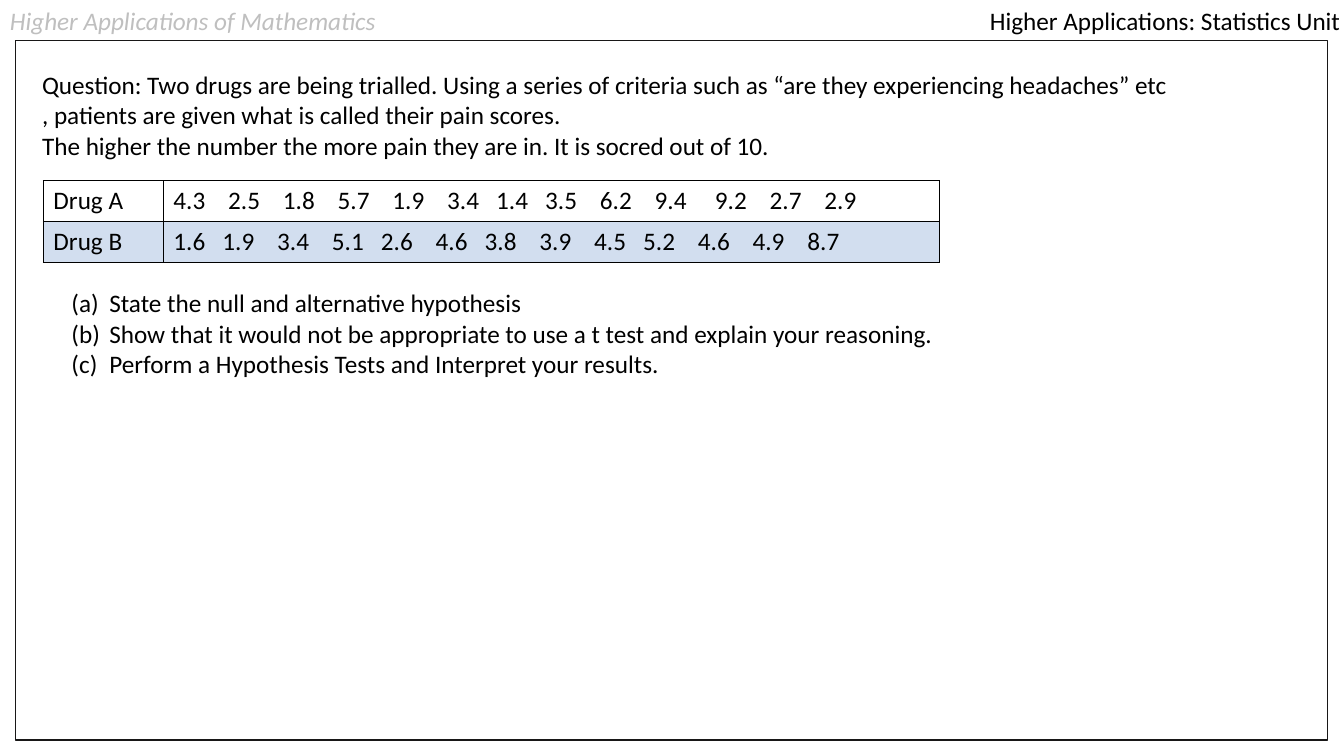
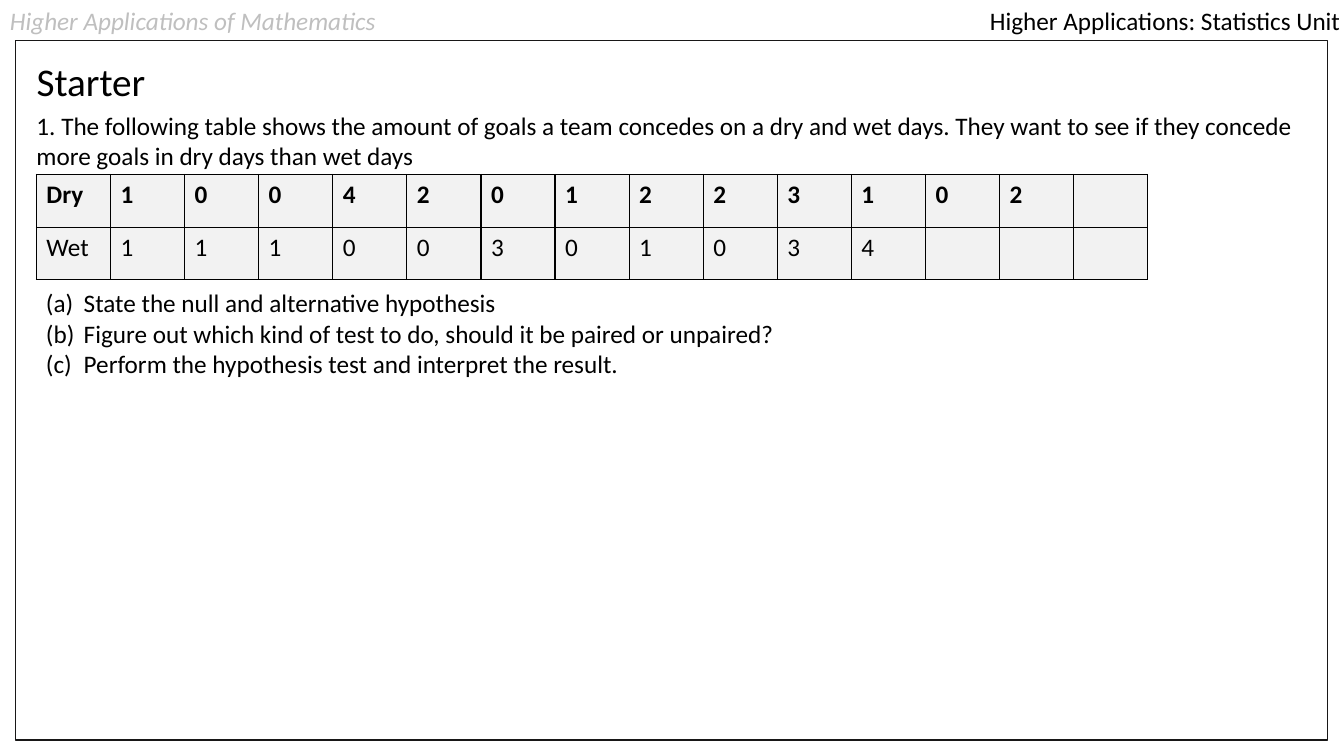
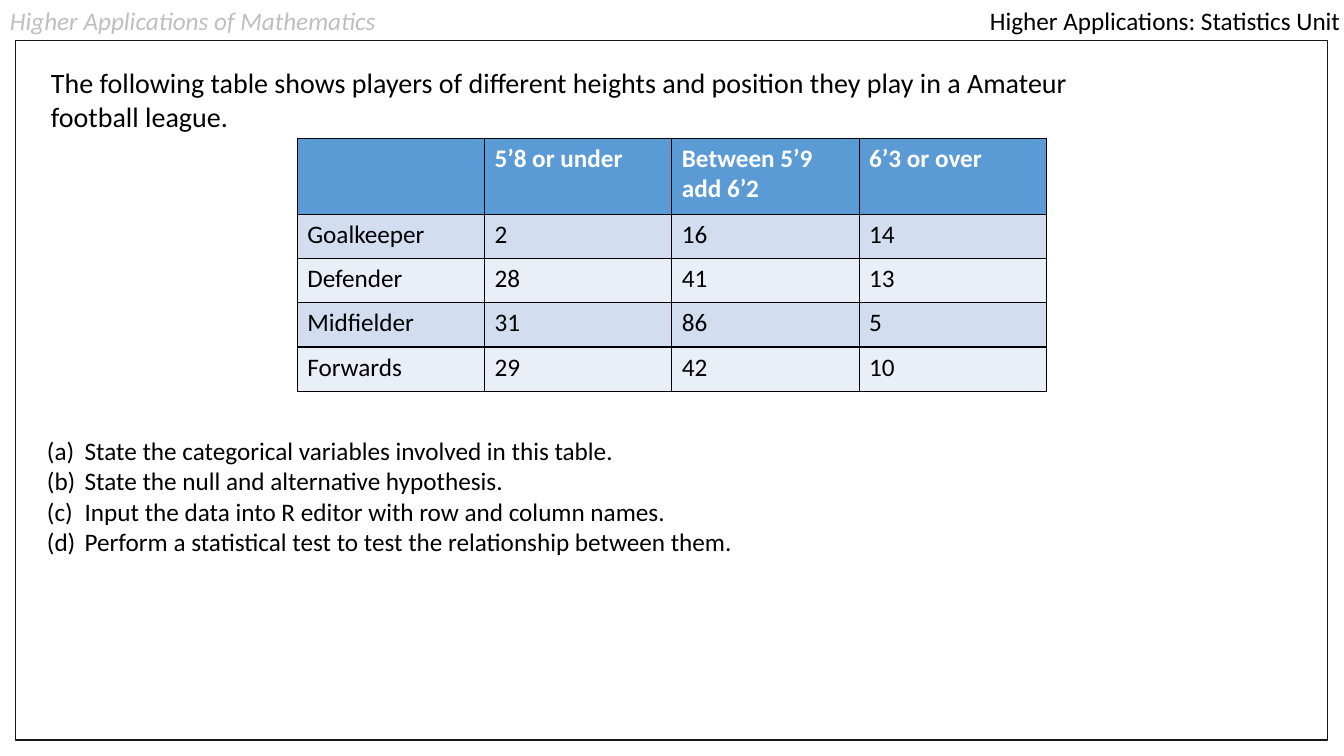
from itertools import accumulate

from pptx import Presentation
from pptx.dml.color import RGBColor
from pptx.enum import shapes, text
from pptx.oxml import parse_xml
from pptx.oxml.ns import nsdecls
from pptx.util import Pt

FONT = "Calibri"
BLACK = RGBColor(0x00, 0x00, 0x00)
WHITE = RGBColor(0xFF, 0xFF, 0xFF)
FRAME = RGBColor(0x18, 0x17, 0x17)
COURSE_GREY = RGBColor(0xBF, 0xBF, 0xBF)
PALE_GREY = RGBColor(0xF2, 0xF2, 0xF2)
HEAD_BLUE = RGBColor(0x5B, 0x9B, 0xD5)
BAND_BLUE = RGBColor(0xD2, 0xDE, 0xEF)
PALE_BLUE = RGBColor(0xEA, 0xEF, 0xF7)

BODY = {"name": FONT, "size": Pt(18), "bold": False, "italic": False}
LIST_INDENT = 27
NARROW, STEP, WIDE = 35, 39.1, 43.1

COURSE = "Higher Applications of Mathematics"
UNIT = "Higher Applications: Statistics Unit"

SCORES_A = ["4.3", "2.5", "1.8", "5.7", "1.9", "3.4", "1.4", "3.5", "6.2", "9.4", "9.2", "2.7", "2.9"]
SCORES_B = ["1.6", "1.9", "3.4", "5.1", "2.6", "4.6", "3.8", "3.9", "4.5", "5.2", "4.6", "4.9", "8.7"]
STEPS_A = [STEP] * 5 + [NARROW] * 2 + [STEP] * 2 + [WIDE] + [STEP] * 2
STEPS_B = [NARROW, STEP, STEP, NARROW, STEP, NARROW, STEP, STEP, NARROW, STEP, STEP, STEP]

SLIDES = [
    {
        "texts": [
            {"at": (23, 46, 906, 72.7), "lines": [
                "Question: Two drugs are being trialled. Using a series of criteria such as "
                "“are they experiencing headaches” etc",
                ", patients are given what is called their pain scores.",
                "The higher the number the more pain they are in. It is socred out of 10.",
            ]},
        ],
        "table": {
            "at": (31, 129), "columns": [85.7, 554.4], "heights": [29.2] * 2,
            "fills": [None, BAND_BLUE], "bold_head": False, "head_color": BLACK,
            "rows": [["Drug A", "\t".join(SCORES_A)], ["Drug B", "\t".join(SCORES_B)]],
            "tabs": [STEPS_A, STEPS_B],
        },
        "tasks": {"at": (44, 202, 637, 72.7), "lines": [
            "State the null and alternative hypothesis",
            "Show that it would not be appropriate to use a t test and explain your reasoning.",
            "Perform a Hypothesis Tests and Interpret your results.",
        ]},
    },
    {
        "texts": [
            {"at": (19, 37.5, 93, 41.2), "lines": ["Starter"], "size": 28, "wrap": False},
            {"at": (19, 75, 931, 50.9), "lines": [
                "1. The following table shows the amount of goals a team concedes on a dry and wet days. "
                "They want to see if they concede more goals in dry days than wet days",
            ]},
        ],
        "table": {
            "at": (26, 124.7), "columns": [52.94] * 15, "heights": [37.6] * 2,
            "fills": [PALE_GREY] * 2, "bold_head": True, "head_color": BLACK,
            "rows": [
                ["Dry", 1, 0, 0, 4, 2, 0, 1, 2, 2, 3, 1, 0, 2, ""],
                ["Wet", 1, 1, 1, 0, 0, 3, 0, 1, 0, 3, 4, "", "", ""],
            ],
        },
        "tasks": {"at": (25.7, 202, 541, 72.7), "lines": [
            "State the null and alternative hypothesis",
            "Figure out which kind of test to do, should it be paired or unpaired?",
            "Perform the hypothesis test and interpret the result.",
        ]},
    },
    {
        "texts": [
            {"at": (29.3, 43.3, 788, 55.7), "size": 20, "lines": [
                "The following table shows players of different heights and position "
                "they play in a Amateur football league.",
            ]},
        ],
        "table": {
            "at": (212.3, 98.7), "columns": [133.8] * 4, "heights": [54.4] + [31.6] * 4,
            "fills": [HEAD_BLUE, BAND_BLUE, PALE_BLUE, BAND_BLUE, PALE_BLUE],
            "bold_head": True, "head_color": WHITE,
            "rows": [
                ["", "5’8 or under", "Between 5’9 add 6’2", "6’3 or over"],
                ["Goalkeeper", 2, 16, 14],
                ["Defender", 28, 41, 13],
                ["Midfielder", 31, 86, 5],
                ["Forwards", 29, 42, 10],
            ],
        },
        "tasks": {"at": (26.4, 307.5, 505, 94.5), "lines": [
            "State the categorical variables involved in this table.",
            "State the null and alternative hypothesis.",
            "Input the data into R editor with row and column names.",
            "Perform a statistical test to test the relationship between them.",
        ]},
    },
]


def write(paragraph, words, color=BLACK, **changes):
    run = paragraph.add_run()
    run.text = str(words)
    for key, value in {**BODY, **changes}.items():
        setattr(run.font, key, value)
    run.font.color.rgb = color


def add_text(slide, at, lines, size=18, wrap=True, lettered=False, color=BLACK, italic=False):
    frame = slide.shapes.add_textbox(*map(Pt, at)).text_frame
    frame.word_wrap = wrap
    frame.auto_size = text.MSO_AUTO_SIZE.SHAPE_TO_FIT_TEXT
    for index, line in enumerate(lines):
        paragraph = frame.add_paragraph() if index else frame.paragraphs[0]
        write(paragraph, line, color, size=Pt(size), italic=italic)
        if lettered:
            properties = paragraph._p.get_or_add_pPr()
            properties.set("marL", str(Pt(LIST_INDENT)))
            properties.set("indent", str(-Pt(LIST_INDENT)))
            properties.append(parse_xml(f'<a:buFont {nsdecls("a")} typeface="+mj-lt"/>'))
            properties.append(parse_xml(f'<a:buAutoNum {nsdecls("a")} type="alphaLcParenBoth"/>'))


def add_borders(cell):
    properties = cell._tc.get_or_add_tcPr()
    for side in "LRTB":
        properties.append(parse_xml(
            f'<a:ln{side} {nsdecls("a")} w="{Pt(1)}"><a:solidFill>'
            f'<a:srgbClr val="{BLACK}"/></a:solidFill></a:ln{side}>'))


def add_tabs(paragraph, steps):
    stops = "".join(f'<a:tab pos="{Pt(pos)}" algn="l"/>' for pos in accumulate(steps))
    paragraph._p.get_or_add_pPr().append(
        parse_xml(f'<a:tabLst {nsdecls("a")}>{stops}</a:tabLst>'))


def add_data(slide, at, columns, heights, fills, bold_head, head_color, rows, tabs=None):
    table = slide.shapes.add_table(
        len(rows), len(columns), *map(Pt, (*at, sum(columns), sum(heights)))).table
    table.first_row = table.horz_banding = False
    for column, width in zip(table.columns, columns):
        column.width = Pt(width)
    for r, values in enumerate(rows):
        table.rows[r].height = Pt(heights[r])
        for c, value in enumerate(values):
            cell = table.cell(r, c)
            add_borders(cell)
            if fills[r] is None:
                cell.fill.background()
            else:
                cell.fill.solid()
                cell.fill.fore_color.rgb = fills[r]
            paragraph = cell.text_frame.paragraphs[0]
            if value != "":
                write(paragraph, value, BLACK if r else head_color, bold=bold_head and r == 0)
            if tabs and c == 1:
                add_tabs(paragraph, tabs[r])


def add_page(deck):
    slide = deck.slides.add_slide(deck.slide_layouts[6])
    add_text(slide, (0, 0, 278.6, 29.1), [COURSE], wrap=False, color=COURSE_GREY, italic=True)
    add_text(slide, (700, 0, 267.8, 29.1), [UNIT], wrap=False)
    border = slide.shapes.add_shape(
        shapes.MSO_SHAPE.RECTANGLE, *map(Pt, (11.2, 29, 937, 499.7)))
    border.shadow.inherit = False
    border.fill.background()
    border.line.color.rgb = FRAME
    border.line.width = Pt(1)
    return slide


def main():
    deck = Presentation()
    deck.slide_width, deck.slide_height = Pt(960), Pt(540)
    for content in SLIDES:
        slide = add_page(deck)
        for block in content["texts"]:
            add_text(slide, **block)
        add_data(slide, **content["table"])
        add_text(slide, **content["tasks"], wrap=False, lettered=True)
    deck.save("out.pptx")


if __name__ == "__main__":
    main()
